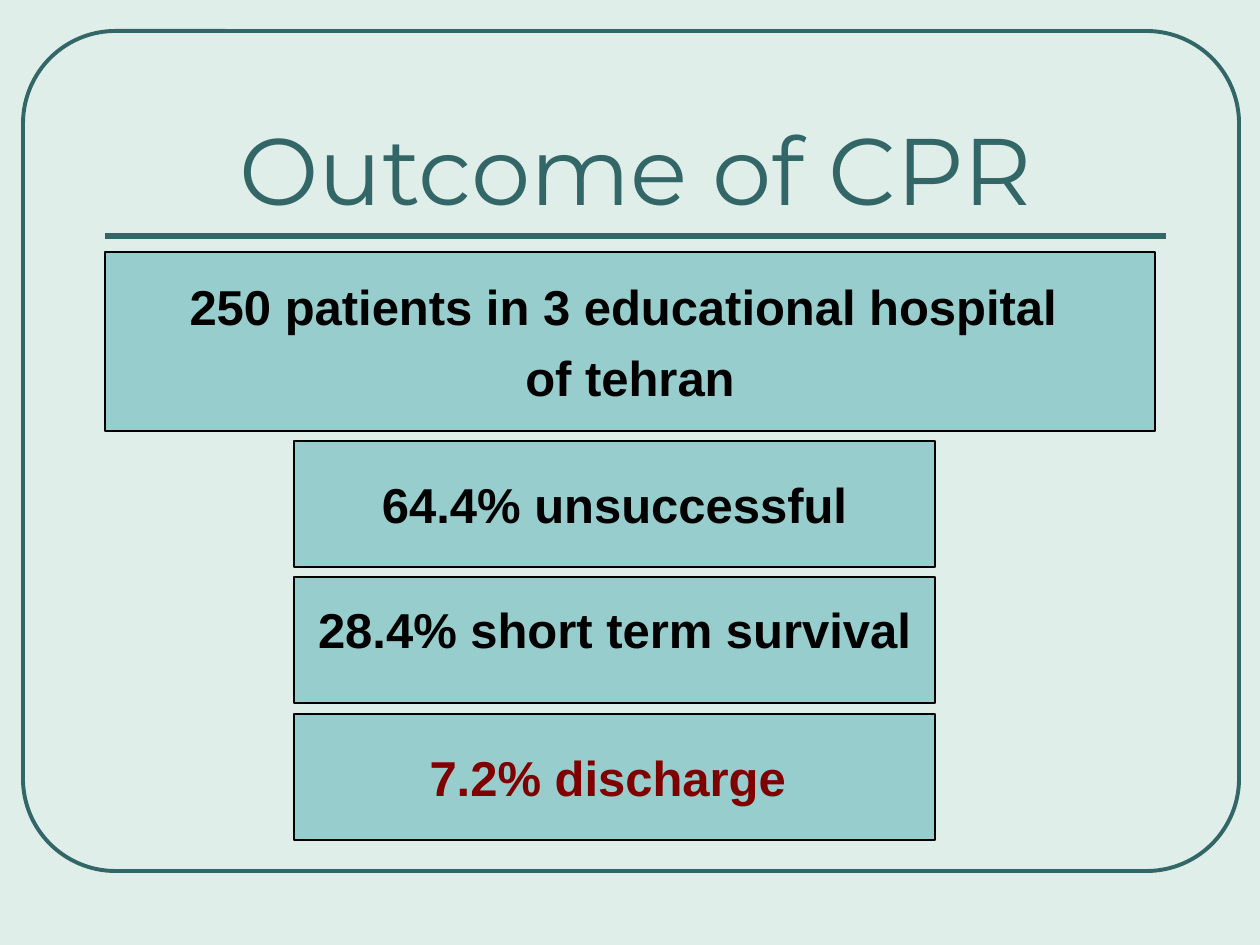
from dataclasses import dataclass

from lxml.etree import SubElement
from pptx import Presentation
from pptx.dml.color import RGBColor
from pptx.enum.shapes import MSO_CONNECTOR, MSO_SHAPE
from pptx.enum.text import MSO_ANCHOR, PP_ALIGN
from pptx.oxml.ns import qn
from pptx.util import Emu, Pt


@dataclass(frozen=True)
class Theme:
    back: str = "E0EEE9"
    teal: str = "336666"
    fill: str = "97CDCC"
    ink: str = "000000"
    alert: str = "800000"
    head_font: str = "Montserrat"
    body_font: str = "Arial"
    head_size: int = 54
    body_size: int = 28
    para_gap: int = 7
    box_line: float = 0.75
    frame_line: float = 2.25
    rule_line: float = 3


THEME = Theme()


def px(count):
    return Emu(round(count * 914400 / 126))


def rgb(code):
    return RGBColor.from_string(code)


def set_line(shape, color, width):
    shape.line.color.rgb = rgb(color)
    shape.line.width = Pt(width)


def write(frame, lines, font, size, color, bold=False):
    for index, line in enumerate(lines):
        para = frame.paragraphs[0] if index == 0 else frame.add_paragraph()
        para.alignment = PP_ALIGN.CENTER
        if index:
            para.space_before = Pt(THEME.para_gap)
        run = para.add_run()
        run.text = line
        run.font.name = font
        run.font.size = Pt(size)
        run.font.bold = bold
        run.font.color.rgb = rgb(color)


def add_frame(slide, left, top, width, height):
    frame = slide.shapes.add_shape(
        MSO_SHAPE.ROUNDED_RECTANGLE, px(left), px(top), px(width), px(height))
    frame.adjustments[0] = 0.11
    frame.shadow.inherit = False
    frame.fill.background()
    set_line(frame, THEME.teal, THEME.frame_line)


def add_rule(slide, left, right, y):
    rule = slide.shapes.add_connector(
        MSO_CONNECTOR.STRAIGHT, px(left), px(y), px(right), px(y))
    set_line(rule, THEME.teal, THEME.rule_line)
    SubElement(rule._element.spPr, qn("a:effectLst"))


def add_title(slide, text, left, top, width, height):
    box = slide.shapes.add_textbox(px(left), px(top), px(width), px(height))
    frame = box.text_frame
    frame.word_wrap = True
    frame.vertical_anchor = MSO_ANCHOR.BOTTOM
    write(frame, [text], THEME.head_font, THEME.head_size, THEME.teal)


def add_box(slide, lines, left, top, width, height, color=THEME.ink, lift=0):
    """Draw a filled box; lift raises its centred text by that many px."""
    box = slide.shapes.add_shape(
        MSO_SHAPE.RECTANGLE, px(left), px(top), px(width), px(height))
    box.shadow.inherit = False
    box.fill.solid()
    box.fill.fore_color.rgb = rgb(THEME.fill)
    set_line(box, THEME.ink, THEME.box_line)
    frame = box.text_frame
    frame.word_wrap = False
    frame.vertical_anchor = MSO_ANCHOR.MIDDLE
    frame.margin_bottom += px(2 * lift)
    write(frame, lines, THEME.body_font, THEME.body_size, color, bold=True)


def main():
    deck = Presentation()
    deck.slide_width, deck.slide_height = px(1260), px(945)
    slide = deck.slides.add_slide(deck.slide_layouts[6])
    slide.background.fill.solid()
    slide.background.fill.fore_color.rgb = rgb(THEME.back)

    add_frame(slide, 23, 31, 1216, 840)
    add_rule(slide, 105, 1166, 236)
    add_title(slide, "Outcome of CPR", 105, 73, 1061, 158)
    add_box(slide, ["250 patients in 3 educational hospital ", "of tehran"],
            105, 252, 1050, 179)

    results = [
        ("64.4% unsuccessful", THEME.ink, 0),
        ("28.4% short term survival", THEME.ink, 11),
        ("7.2% discharge ", THEME.alert, 0),
    ]
    for index, (text, color, lift) in enumerate(results):
        top = 441 + index * 273 // 2
        add_box(slide, [text], 294, top, 641, 126, color, lift)

    deck.save("out.pptx")


if __name__ == "__main__":
    main()
